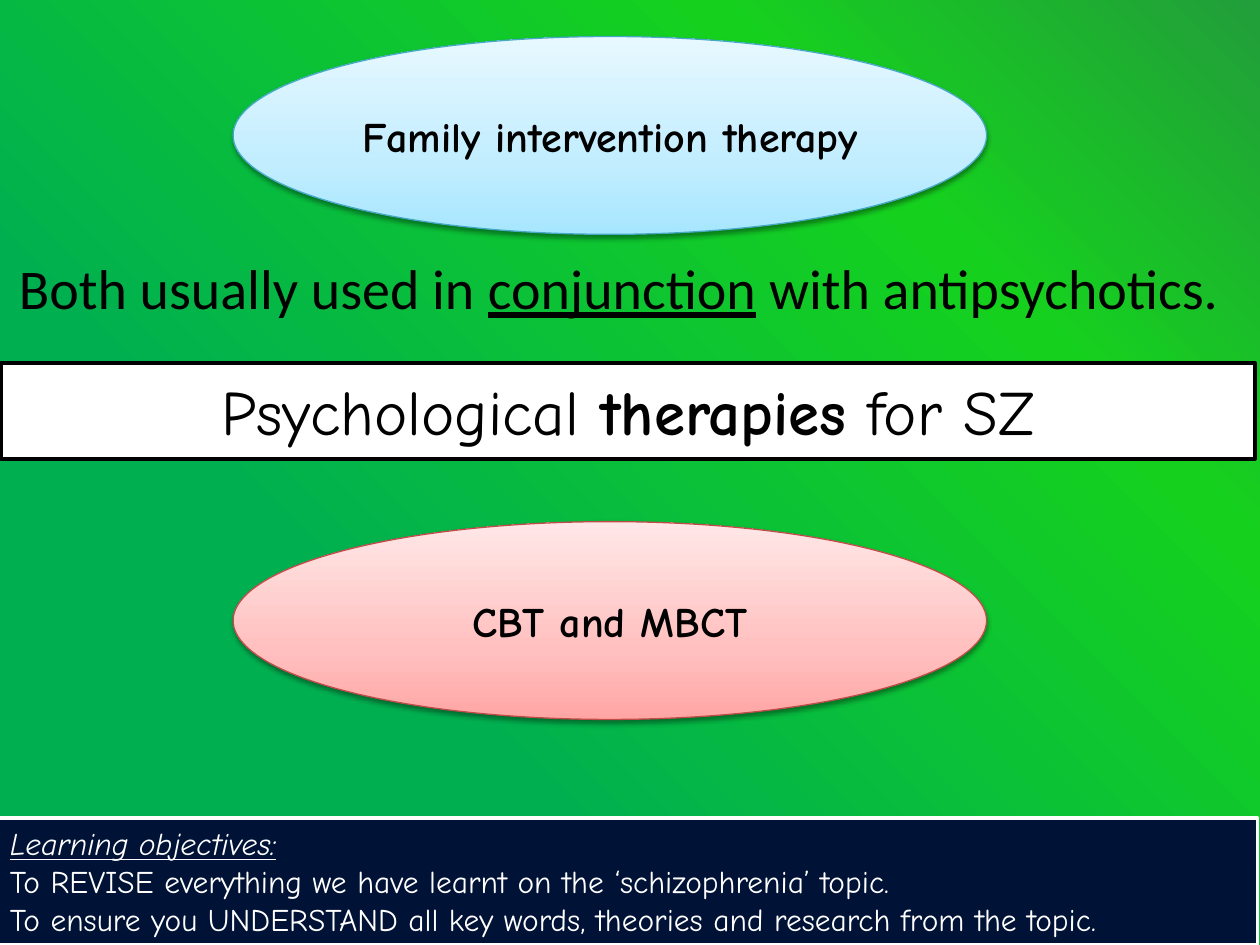
from lxml.etree import SubElement
from pptx import Presentation
from pptx.dml.color import RGBColor
from pptx.enum.shapes import MSO_SHAPE
from pptx.enum.text import MSO_ANCHOR, MSO_AUTO_SIZE, PP_ALIGN
from pptx.oxml.ns import qn
from pptx.util import Inches, Pt


def rgb(value):
    return RGBColor.from_string(value)


class Deck:
    COLS, ROWS = 100, 75
    BODY, HAND = "Calibri", "Comic Neue"
    BLACK, WHITE, NAVY = "000000", "FFFFFF", "001236"

    def __init__(self):
        self.prs = Presentation()
        self.prs.slide_width, self.prs.slide_height = Inches(10), Inches(7.5)
        self.s = self.prs.slides.add_slide(self.prs.slide_layouts[1])

    def box(self, col, row, cols, rows):
        w = self.prs.slide_width / self.COLS
        h = self.prs.slide_height / self.ROWS
        return [round(v) for v in (col * w, row * h, cols * w, rows * h)]

    def place(self, sp, box):
        sp.left, sp.top, sp.width, sp.height = self.box(*box)

    def gradient(self, fill, element, stops, angle):
        fill.gradient()
        fill.gradient_angle = angle
        gs_lst = element.find(".//" + qn("a:gsLst"))
        for gs in list(gs_lst):
            gs_lst.remove(gs)
        for pos, color in stops:
            gs = SubElement(gs_lst, qn("a:gs"), pos=str(pos * 1000))
            SubElement(gs, qn("a:srgbClr"), val=color)

    def background(self, stops, angle):
        self.gradient(self.s.background.fill, self.s.element, stops, angle)

    def outline(self, sp, color, width):
        sp.line.color.rgb = rgb(color)
        sp.line.width = Pt(width)

    def add_text(self, tf, paragraphs, size, font, color, align=PP_ALIGN.LEFT):
        tf.word_wrap = True
        for i, runs in enumerate(paragraphs):
            p = tf.add_paragraph() if i else tf.paragraphs[0]
            p.alignment = align
            for text, marks in runs:
                r = p.add_run()
                r.text = text
                r.font.size, r.font.name = Pt(size), font
                r.font.color.rgb = rgb(color)
                r.font.bold = "b" in marks
                r.font.italic = "i" in marks
                r.font.underline = "u" in marks

    def title(self, box, runs):
        sp = self.s.shapes.title
        self.place(sp, box)
        sp.fill.solid()
        sp.fill.fore_color.rgb = rgb(self.WHITE)
        self.outline(sp, self.BLACK, 2.25)
        sp.text_frame.auto_size = MSO_AUTO_SIZE.NONE
        sp.text_frame.vertical_anchor = MSO_ANCHOR.MIDDLE
        self.add_text(sp.text_frame, [runs], 36, self.HAND, self.BLACK, PP_ALIGN.CENTER)

    def body(self, box, runs):
        sp = self.s.placeholders[1]
        self.place(sp, box)
        tf = sp.text_frame
        tf.auto_size = MSO_AUTO_SIZE.NONE
        self.add_text(tf, [runs], 32, self.BODY, self.BLACK)
        for p in tf.paragraphs:
            pPr = p._p.get_or_add_pPr()
            pPr.set("marL", "0")
            pPr.set("indent", "0")
            SubElement(pPr, qn("a:buNone"))

    def panel(self, box, paragraphs):
        sp = self.s.shapes.add_shape(MSO_SHAPE.RECTANGLE, *self.box(*box))
        sp.shadow.inherit = False
        sp.fill.solid()
        sp.fill.fore_color.rgb = rgb(self.NAVY)
        self.outline(sp, self.WHITE, 2)
        sp.text_frame.vertical_anchor = MSO_ANCHOR.TOP
        sp.text_frame.auto_size = MSO_AUTO_SIZE.SHAPE_TO_FIT_TEXT
        self.add_text(sp.text_frame, paragraphs, 18, self.HAND, self.WHITE)

    def ellipse(self, row, text, stops, line):
        sp = self.s.shapes.add_shape(MSO_SHAPE.OVAL, *self.box(18.5, row, 59.8, 15.7))
        self.gradient(sp.fill, sp.element, stops, 90)
        self.outline(sp, line, 0.75)
        self.drop_shadow(sp)
        sp.text_frame.vertical_anchor = MSO_ANCHOR.MIDDLE
        self.add_text(sp.text_frame, [[(text, "b")]], 24, self.HAND, self.BLACK, PP_ALIGN.CENTER)

    def drop_shadow(self, sp):
        sp.shadow.inherit = False
        effects = sp.element.spPr.find(qn("a:effectLst"))
        shadow = SubElement(effects, qn("a:outerShdw"), blurRad=str(Pt(3.1)),
                            dist=str(Pt(1.6)), dir="5400000", rotWithShape="0")
        color = SubElement(shadow, qn("a:srgbClr"), val=self.BLACK)
        SubElement(color, qn("a:alpha"), val="38000")


def main():
    deck = Deck()
    deck.background([(0, "00B050"), (31, "00B050"), (75, "15D11E"), (100, "229E3A")], 45)
    deck.body((0.5, 19.6, 99.5, 49.5), [
        ("Both usually used in ", ""), ("conjunction", "u"), (" with antipsychotics.", "")])
    deck.panel((-0.2, 64.9, 100, 10.1), [
        [("Learning objectives:", "iu")],
        [("To REVISE everything we have learnt on the ‘schizophrenia’ topic.", "")],
        [("To ensure you UNDERSTAND all key words, theories and research from the topic.", "")]])
    deck.title((0.1, 28.8, 99.5, 7.6), [
        ("Psychological ", ""), ("therapies", "b"), (" for SZ", "")])
    deck.ellipse(2.9, "Family intervention therapy",
                 [(0, "A7E6FF"), (35, "C1EDFF"), (100, "E7F8FF")], "46AAC5")
    deck.ellipse(41.4, "CBT and MBCT",
                 [(0, "FFA6A5"), (35, "FFC0BF"), (100, "FFE7E7")], "BF4C48")
    deck.prs.save("out.pptx")


if __name__ == "__main__":
    main()
